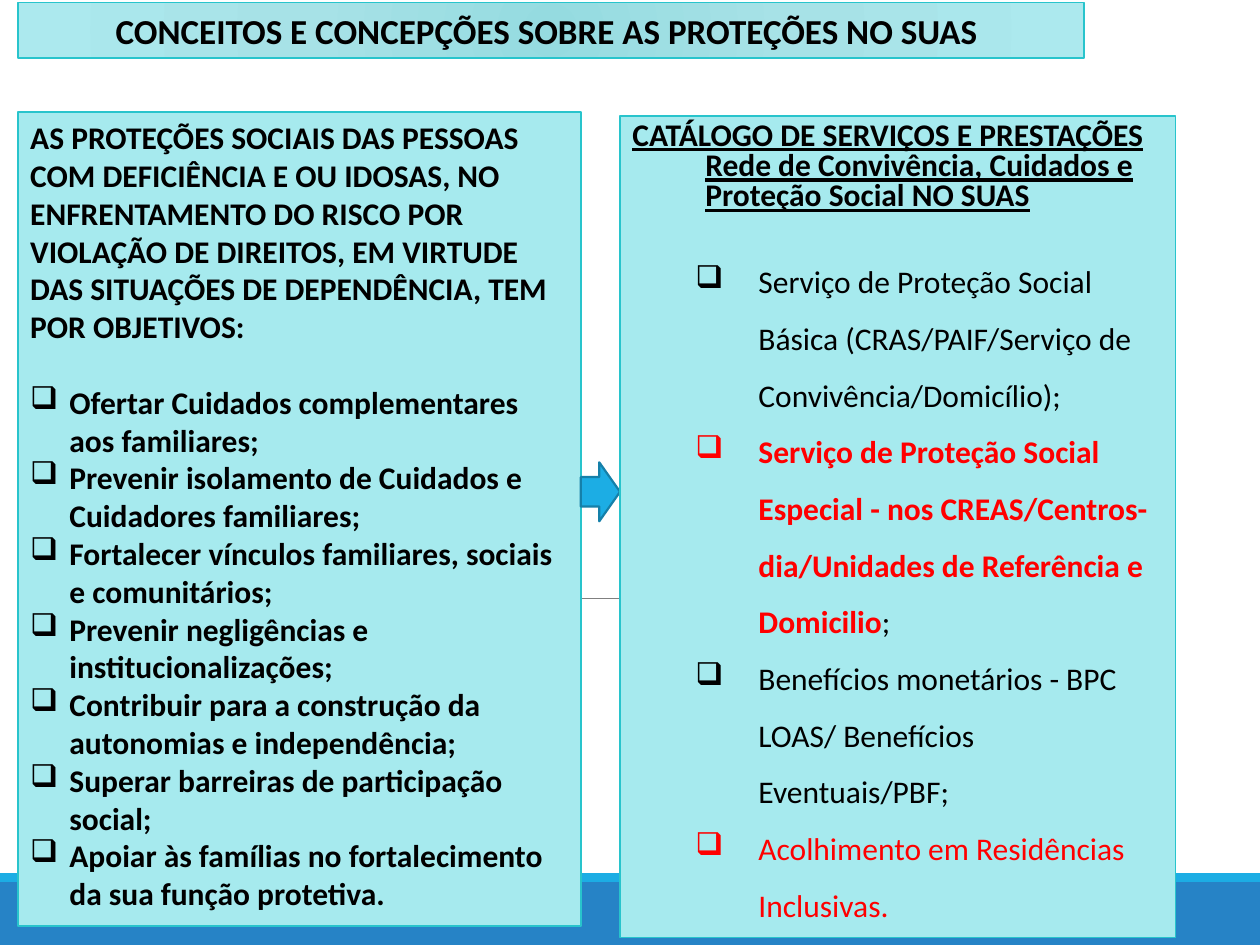
from dataclasses import dataclass
from typing import Optional

from lxml.etree import SubElement
from pptx import Presentation
from pptx.dml.color import RGBColor
from pptx.enum.shapes import MSO_CONNECTOR, MSO_SHAPE
from pptx.enum.text import MSO_ANCHOR, MSO_AUTO_SIZE, PP_ALIGN
from pptx.oxml.ns import qn
from pptx.util import Cm, Pt

COLORS = {
    "band": "2683C6", "accent": "1CADE4", "arrow_edge": "1580A9",
    "panel": "A6EAEE", "panel_edge": "28C4CC", "rule": "808080",
    "text": "000000", "highlight": "FF0000",
}
TITLE_GRADIENT = [(0, "95DBE0"), (45, "A7E2E7"), (100, "ACE9EE")]


@dataclass
class Block:
    left: float
    top: float
    width: float
    height: float
    fill: str
    edge: Optional[str] = None
    edge_width: float = 1
    kind: MSO_SHAPE = MSO_SHAPE.RECTANGLE


@dataclass
class Entry:
    text: str
    color: str = "text"
    bold: bool = True
    underline: bool = False
    size: float = 18
    indent: float = 0
    hanging: float = 0
    level: int = 0
    spacing: float = 1
    after: float = 0
    bullet: bool = False
    align: PP_ALIGN = PP_ALIGN.LEFT
    ending: str = ""  # closing text in plain black


def rgb(name: str) -> RGBColor:
    return RGBColor.from_string(COLORS[name])


def objective(text: str) -> Entry:
    return Entry(text, indent=0.79, hanging=0.79, bullet=True)


def service(text: str, color: str = "text", bold: bool = False, ending: str = "") -> Entry:
    return Entry(text, color, bold, indent=2.54, hanging=1.27, level=1,
                 spacing=1.5, bullet=True, ending=ending)


BANDS = [Block(0, 17.78, 25.4, 1.27, "band"), Block(0, 17.6, 25.4, 0.18, "accent")]
ARROW = Block(11.71, 9.32, 0.79, 1.19, "accent", "arrow_edge", 1.25, MSO_SHAPE.RIGHT_ARROW)
OBJECTIVES_PANEL = Block(0.36, 2.26, 11.35, 16.41, "panel", "panel_edge")
SERVICES_PANEL = Block(12.5, 2.34, 11.2, 16.56, "panel", "panel_edge")
TITLE_PANEL = Block(0.36, 0.05, 21.49, 1.12, "panel", "panel_edge")

OBJECTIVES = [
    Entry("AS PROTEÇÕES SOCIAIS DAS PESSOAS COM DEFICIÊNCIA E OU IDOSAS, NO "
          "ENFRENTAMENTO DO RISCO POR VIOLAÇÃO DE DIREITOS, EM VIRTUDE DAS "
          "SITUAÇÕES DE DEPENDÊNCIA, TEM POR OBJETIVOS:", after=21.6),
    objective("Ofertar Cuidados complementares aos familiares;"),
    objective("Prevenir isolamento de Cuidados e Cuidadores familiares;"),
    objective("Fortalecer vínculos familiares, sociais e comunitários;"),
    objective("Prevenir negligências e institucionalizações;"),
    objective("Contribuir para a construção da autonomias e independência;"),
    objective("Superar barreiras de participação social;"),
    objective("Apoiar às famílias no fortalecimento da sua função protetiva."),
]
SERVICES = [
    Entry("CATÁLOGO DE SERVIÇOS E PRESTAÇÕES Rede de Convivência, Cuidados e "
          "Proteção Social NO SUAS", underline=True, indent=1.47, hanging=1.47,
          spacing=0.8, after=17.3),
    service("Serviço de Proteção Social Básica (CRAS/PAIF/Serviço de Convivência/Domicílio);"),
    service("Serviço de Proteção Social Especial - nos CREAS/Centros-dia/Unidades de "
            "Referência e Domicilio", "highlight", True, ";"),
    service("Benefícios monetários - BPC LOAS/ Benefícios Eventuais/PBF;"),
    service("Acolhimento em Residências Inclusivas.", "highlight"),
]
TITLE = [Entry("CONCEITOS E CONCEPÇÕES SOBRE AS PROTEÇÕES NO SUAS ", size=20,
               align=PP_ALIGN.CENTER)]


def add_block(page, block: Block):
    shape = page.shapes.add_shape(block.kind, Cm(block.left), Cm(block.top),
                                  Cm(block.width), Cm(block.height))
    shape.shadow.inherit = False
    shape.fill.solid()
    shape.fill.fore_color.rgb = rgb(block.fill)
    if block.edge:
        shape.line.color.rgb = rgb(block.edge)
        shape.line.width = Pt(block.edge_width)
    else:
        shape.line.fill.background()
    return shape


def add_rule(page) -> None:
    rule = page.shapes.add_connector(MSO_CONNECTOR.STRAIGHT, Cm(2.51), Cm(12.07),
                                     Cm(23.09), Cm(12.07))
    rule.line.color.rgb = rgb("rule")
    rule.line.width = Pt(0.5)
    SubElement(rule._element.spPr, qn("a:effectLst"))


def set_radial_fill(shape, stops: list[tuple[int, str]]) -> None:
    """Replace the solid fill with a circular gradient."""
    properties = shape._element.spPr
    solid = properties.find(qn("a:solidFill"))
    gradient = SubElement(properties, qn("a:gradFill"), rotWithShape="1")
    stop_list = SubElement(gradient, qn("a:gsLst"))
    for position, color in stops:
        stop = SubElement(stop_list, qn("a:gs"), pos=str(position * 1000))
        SubElement(stop, qn("a:srgbClr"), val=color)
    circle = SubElement(gradient, qn("a:path"), path="circle")
    SubElement(circle, qn("a:fillToRect"), {side: "100000" for side in "ltrb"})
    properties.replace(solid, gradient)


def write_entry(paragraph, entry: Entry) -> None:
    paragraph.alignment = entry.align
    paragraph.level = entry.level
    paragraph.line_spacing = entry.spacing
    paragraph.space_after = Pt(entry.after)
    properties = paragraph._p.get_or_add_pPr()
    properties.set("marL", str(Cm(entry.indent)))
    properties.set("indent", str(-Cm(entry.hanging)))
    if entry.bullet:
        SubElement(properties, qn("a:buChar"), char="❑")
    font = paragraph.font
    font.name = "Calibri"
    font.size = Pt(entry.size)
    font.bold = entry.bold
    font.underline = entry.underline
    font.color.rgb = rgb(entry.color)
    paragraph.add_run().text = entry.text
    if entry.ending:
        span = paragraph.add_run()
        span.text = entry.ending
        span.font.bold = False
        span.font.color.rgb = rgb("text")


def write_text(shape, entries: list[Entry], anchor: MSO_ANCHOR, grow: bool) -> None:
    frame = shape.text_frame
    frame.word_wrap = True
    frame.vertical_anchor = anchor
    frame.auto_size = MSO_AUTO_SIZE.SHAPE_TO_FIT_TEXT if grow else MSO_AUTO_SIZE.NONE
    for index, entry in enumerate(entries):
        write_entry(frame.add_paragraph() if index else frame.paragraphs[0], entry)


def main() -> None:
    deck = Presentation()
    deck.slide_width, deck.slide_height = Cm(25.4), Cm(19.05)
    page = deck.slides.add_slide(deck.slide_layouts[6])
    for band in BANDS:
        add_block(page, band)
    add_rule(page)
    write_text(add_block(page, OBJECTIVES_PANEL), OBJECTIVES, MSO_ANCHOR.TOP, True)
    arrow = add_block(page, ARROW)
    arrow.adjustments[1] = 0.53
    write_text(add_block(page, SERVICES_PANEL), SERVICES, MSO_ANCHOR.TOP, True)
    title = add_block(page, TITLE_PANEL)
    set_radial_fill(title, TITLE_GRADIENT)
    write_text(title, TITLE, MSO_ANCHOR.MIDDLE, False)
    deck.save("out.pptx")


if __name__ == "__main__":
    main()
